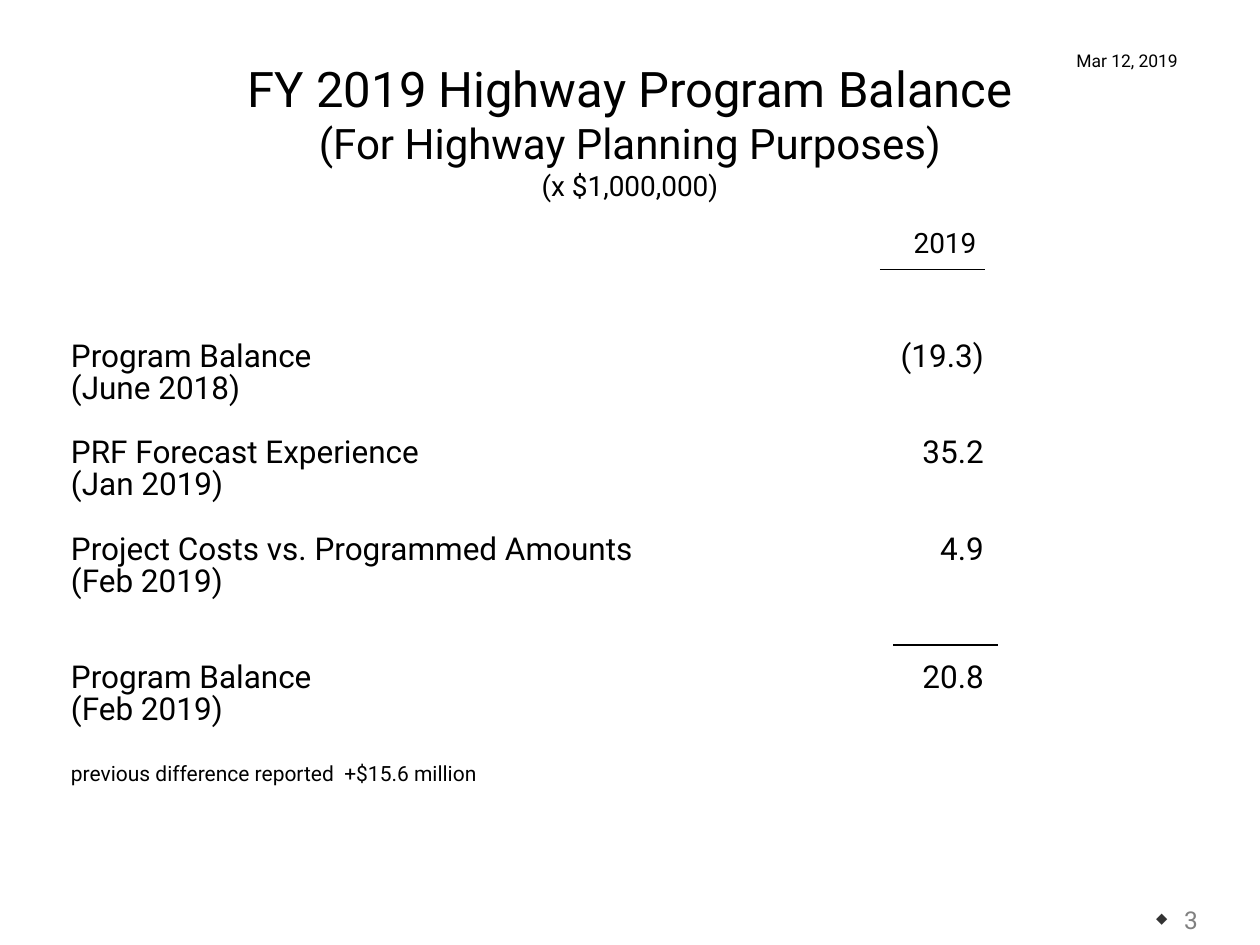
from dataclasses import dataclass

from lxml.etree import SubElement
from pptx import Presentation
from pptx.dml.color import RGBColor
from pptx.enum.shapes import MSO_CONNECTOR
from pptx.enum.text import MSO_ANCHOR, PP_ALIGN
from pptx.oxml.ns import qn
from pptx.util import Pt


@dataclass(frozen=True)
class Theme:
    font: str = "Roboto"
    ink: str = "000000"
    muted: str = "808080"
    bullet: str = "333333"
    title: float = 28
    subtitle: float = 24
    unit: float = 16
    body: float = 18
    page_number: float = 14
    note: float = 12
    date: float = 10
    rule: float = 0.75
    leading: float = 0.85


class BalanceSlide:
    """Draws the elements of the balance slide in one theme."""

    def __init__(self, deck, theme):
        self.theme = theme
        self.page = deck.slides.add_slide(deck.slide_layouts[6])

    def box(self, left, top, width, height, anchor=MSO_ANCHOR.TOP):
        shape = self.page.shapes.add_textbox(Pt(left), Pt(top), Pt(width), Pt(height))
        frame = shape.text_frame
        frame.word_wrap = True
        frame.vertical_anchor = anchor
        frame.margin_left = frame.margin_right = 0
        frame.margin_top = frame.margin_bottom = Pt(3.6)
        return frame

    def para(self, frame, align=PP_ALIGN.LEFT, before=0):
        first = frame.paragraphs[0]
        para = frame.add_paragraph() if first.runs else first
        para.alignment = align
        para.space_before = Pt(before)
        return para

    def span(self, para, text, size, color=None):
        run = para.add_run()
        run.text = text
        run.font.name = self.theme.font
        run.font.size = Pt(size)
        run.font.color.rgb = RGBColor.from_string(color or self.theme.ink)

    def centered(self, frame, text, size):
        self.span(self.para(frame, PP_ALIGN.CENTER), text, size)

    def entry(self, frame, label, value, date, before, value_edge):
        para = self.para(frame, before=before)
        para.line_spacing = self.theme.leading
        tabs = SubElement(para._p.get_or_add_pPr(), qn("a:tabLst"))
        SubElement(tabs, qn("a:tab"), pos=str(Pt(value_edge)), algn="r")
        self.span(para, label, self.theme.body)
        self.span(para, "\t" + value, self.theme.body)
        para.add_line_break()
        self.span(para, date, self.theme.body)

    def note(self, frame, text, before):
        para = self.para(frame, before=before)
        para.line_spacing = self.theme.leading
        self.span(para, text, self.theme.note)

    def rule(self, left, top, width):
        line = self.page.shapes.add_connector(
            MSO_CONNECTOR.STRAIGHT, Pt(left), Pt(top), Pt(left + width), Pt(top))
        line.line.color.rgb = RGBColor.from_string(self.theme.ink)
        line.line.width = Pt(self.theme.rule)
        SubElement(line._element.spPr, qn("a:effectLst"))

    def page_number(self, frame, text, indent):
        para = self.para(frame, PP_ALIGN.RIGHT)
        properties = para._p.get_or_add_pPr()
        properties.set("marL", str(Pt(indent)))
        properties.set("indent", str(-Pt(indent)))
        color = SubElement(properties, qn("a:buClr"))
        SubElement(color, qn("a:srgbClr"), val=self.theme.bullet)
        SubElement(properties, qn("a:buSzPct"), val="60000")
        SubElement(properties, qn("a:buChar"), char="◆")
        self.span(para, text, self.theme.page_number, self.theme.muted)


def main():
    deck = Presentation()
    deck.slide_width, deck.slide_height = Pt(720), Pt(540)
    theme = Theme()
    slide = BalanceSlide(deck, theme)

    heading = slide.box(0, 30.2, 720, 108)
    slide.centered(heading, "FY 2019 Highway Program Balance", theme.title)
    slide.centered(heading, "(For Highway Planning Purposes)", theme.subtitle)
    slide.centered(heading, "(x $1,000,000)", theme.unit)
    slide.centered(slide.box(586.8, 25.2, 114.5, 19.4), "Mar 12, 2019", theme.date)
    slide.centered(slide.box(510, 125.3, 60, 27), "2019", theme.unit)

    line_gap = 18.36
    entries = [
        ("Program Balance", "(19.3)", "(June 2018)", 0),
        ("PRF Forecast Experience", "35.2", "(Jan 2019)", line_gap),
        ("Project Costs vs. Programmed Amounts", "4.9", "(Feb 2019)", line_gap),
        ("Program Balance", "20.8", "(Feb 2019)", 2 * line_gap),
    ]
    balance = slide.box(40.6, 191.6, 560, 265)
    for label, value, date, before in entries:
        slide.entry(balance, label, value, date, before, value_edge=521.6)
    slide.note(balance, "previous difference reported  +$15.6 million", before=21)

    for left, top in ((502.8, 154), (510.4, 368.6)):
        slide.rule(left, top, width=60)

    corner = slide.box(519, 501.8, 165.5, 36, MSO_ANCHOR.BOTTOM)
    slide.page_number(corner, "3", indent=16)
    deck.save("out.pptx")


if __name__ == "__main__":
    main()
